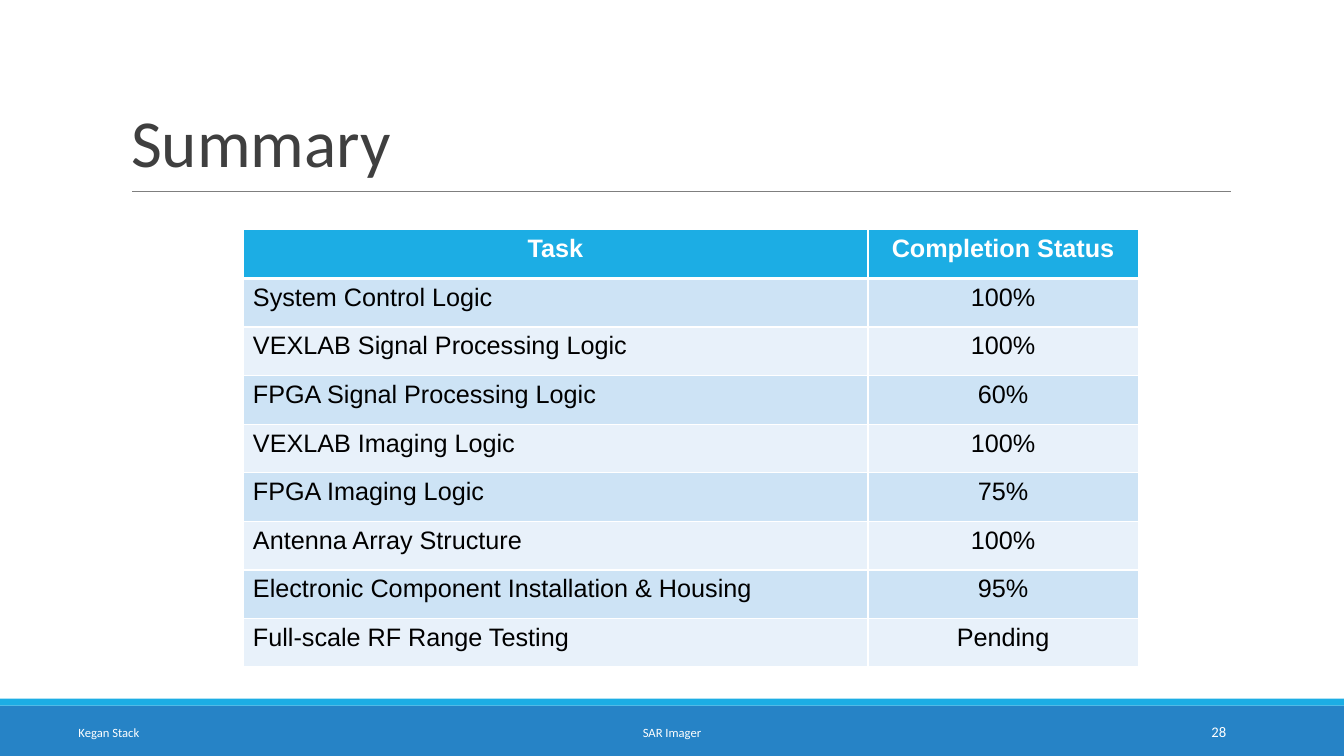
from dataclasses import dataclass

from lxml.etree import SubElement
from pptx import Presentation
from pptx.dml.color import RGBColor
from pptx.enum.shapes import MSO_CONNECTOR, MSO_SHAPE
from pptx.enum.text import MSO_ANCHOR, MSO_AUTO_SIZE, PP_ALIGN
from pptx.oxml import parse_xml
from pptx.oxml.ns import nsdecls, qn
from pptx.slide import Slide
from pptx.table import _Cell
from pptx.text.text import TextFrame
from pptx.util import Pt


@dataclass(frozen=True)
class Theme:
    heading_font: str = "Calibri"
    table_font: str = "Arial"
    title_size: float = 48
    table_size: float = 18
    number_size: float = 10.5
    footer_size: float = 9
    accent: str = "1CADE4"
    footer: str = "2683C6"
    rule: str = "7F7F7F"
    title: str = "3F3F3F"
    text: str = "000000"
    white: str = "FFFFFF"
    bands: tuple[str, str] = ("CDE3F5", "E8F1FA")


@dataclass(frozen=True)
class Bar:
    top: float
    height: float
    color: str


@dataclass(frozen=True)
class Label:
    text: str
    left: float
    top: float
    width: float
    height: float
    size: float
    align: PP_ALIGN
    anchor: MSO_ANCHOR


@dataclass(frozen=True)
class Task:
    name: str
    status: str


THEME = Theme()
SLIDE_W, SLIDE_H = 960, 540
ROW_H = 34.7
COLUMN_WIDTHS = (446.5, 193)

BARS = (
    Bar(504, 36, THEME.footer),
    Bar(499, 5, THEME.accent),
)

LABELS = (
    Label("28", 780, 508.5, 103, 28.75, THEME.number_size, PP_ALIGN.RIGHT, MSO_ANCHOR.MIDDLE),
    Label("SAR Imager", 290, 508.5, 380, 28.75, THEME.footer_size, PP_ALIGN.CENTER, MSO_ANCHOR.MIDDLE),
    Label("Kegan Stack", 49, 514, 124.5, 18, THEME.footer_size, PP_ALIGN.LEFT, MSO_ANCHOR.TOP),
)

HEADER = Task("Task", "Completion Status")
TASKS = (
    Task("System Control Logic", "100%"),
    Task("VEXLAB Signal Processing Logic", "100%"),
    Task("FPGA Signal Processing Logic", "60%"),
    Task("VEXLAB Imaging Logic", "100%"),
    Task("FPGA Imaging Logic", "75%"),
    Task("Antenna Array Structure", "100%"),
    Task("Electronic Component Installation & Housing", "95%"),
    Task("Full-scale RF Range Testing", "Pending"),
)


def rgb(color: str) -> RGBColor:
    return RGBColor.from_string(color)


def write(tf: TextFrame, text: str, font: str, size: float, color: str,
          align: PP_ALIGN, bold: bool = False) -> None:
    tf.text = text
    p = tf.paragraphs[0]
    p.alignment = align
    r = p.runs[0]
    r.font.name = font
    r.font.size = Pt(size)
    r.font.bold = bold
    r.font.color.rgb = rgb(color)


def add_bar(s: Slide, bar: Bar) -> None:
    sp = s.shapes.add_shape(MSO_SHAPE.RECTANGLE, 0, Pt(bar.top), Pt(SLIDE_W), Pt(bar.height))
    sp.shadow.inherit = False
    sp.fill.solid()
    sp.fill.fore_color.rgb = rgb(bar.color)
    sp.line.fill.background()


def add_rule(s: Slide) -> None:
    line = s.shapes.add_connector(MSO_CONNECTOR.STRAIGHT, Pt(94.5), Pt(136.8), Pt(879), Pt(136.8))
    line.line.color.rgb = rgb(THEME.rule)
    line.line.width = Pt(0.75)
    SubElement(line._element.spPr, qn("a:effectLst"))


def add_title(s: Slide, text: str) -> None:
    sp = s.shapes.title
    sp.left, sp.top, sp.width, sp.height = Pt(86.4), Pt(22.5), Pt(792), Pt(114.3)
    tf = sp.text_frame
    tf.auto_size = MSO_AUTO_SIZE.NONE
    tf.vertical_anchor = MSO_ANCHOR.BOTTOM
    tf.margin_left = tf.margin_right = tf.margin_top = tf.margin_bottom = Pt(7.2)
    write(tf, text, THEME.heading_font, THEME.title_size, THEME.title, PP_ALIGN.LEFT)
    tf.paragraphs[0].line_spacing = 0.85


def add_label(s: Slide, label: Label) -> None:
    sp = s.shapes.add_textbox(Pt(label.left), Pt(label.top), Pt(label.width), Pt(label.height))
    tf = sp.text_frame
    tf.word_wrap = True
    tf.vertical_anchor = label.anchor
    write(tf, label.text, THEME.heading_font, label.size, THEME.white, label.align)


def set_borders(cell: _Cell, bottom: float) -> None:
    tc_pr = cell._tc.get_or_add_tcPr()
    widths = {"lnL": 1, "lnR": 1, "lnT": 1, "lnB": bottom}
    for i, (tag, width) in enumerate(widths.items()):
        tc_pr.insert(i, parse_xml(
            f'<a:{tag} {nsdecls("a")} w="{Pt(width)}"><a:solidFill>'
            f'<a:srgbClr val="{THEME.white}"/></a:solidFill></a:{tag}>'))


def add_task_table(s: Slide) -> None:
    rows = (HEADER, *TASKS)
    table = s.shapes.add_table(len(rows), len(COLUMN_WIDTHS), Pt(173.5), Pt(164.2),
                               Pt(sum(COLUMN_WIDTHS)), Pt(ROW_H * len(rows))).table
    for column, width in zip(table.columns, COLUMN_WIDTHS):
        column.width = Pt(width)
    for i, task in enumerate(rows):
        table.rows[i].height = Pt(ROW_H)
        is_header = i == 0
        fill = THEME.accent if is_header else THEME.bands[(i - 1) % 2]
        color = THEME.white if is_header else THEME.text
        for j, text in enumerate((task.name, task.status)):
            cell = table.cell(i, j)
            cell.fill.solid()
            cell.fill.fore_color.rgb = rgb(fill)
            set_borders(cell, 3 if is_header else 1)
            align = PP_ALIGN.CENTER if is_header or j == 1 else PP_ALIGN.LEFT
            write(cell.text_frame, text, THEME.table_font, THEME.table_size, color, align, is_header)


def main() -> None:
    prs = Presentation()
    prs.slide_width, prs.slide_height = Pt(SLIDE_W), Pt(SLIDE_H)
    s = prs.slides.add_slide(prs.slide_layouts[5])
    for bar in BARS:
        add_bar(s, bar)
    add_rule(s)
    add_title(s, "Summary")
    for label in LABELS:
        add_label(s, label)
    add_task_table(s)
    prs.save("out.pptx")


if __name__ == "__main__":
    main()
